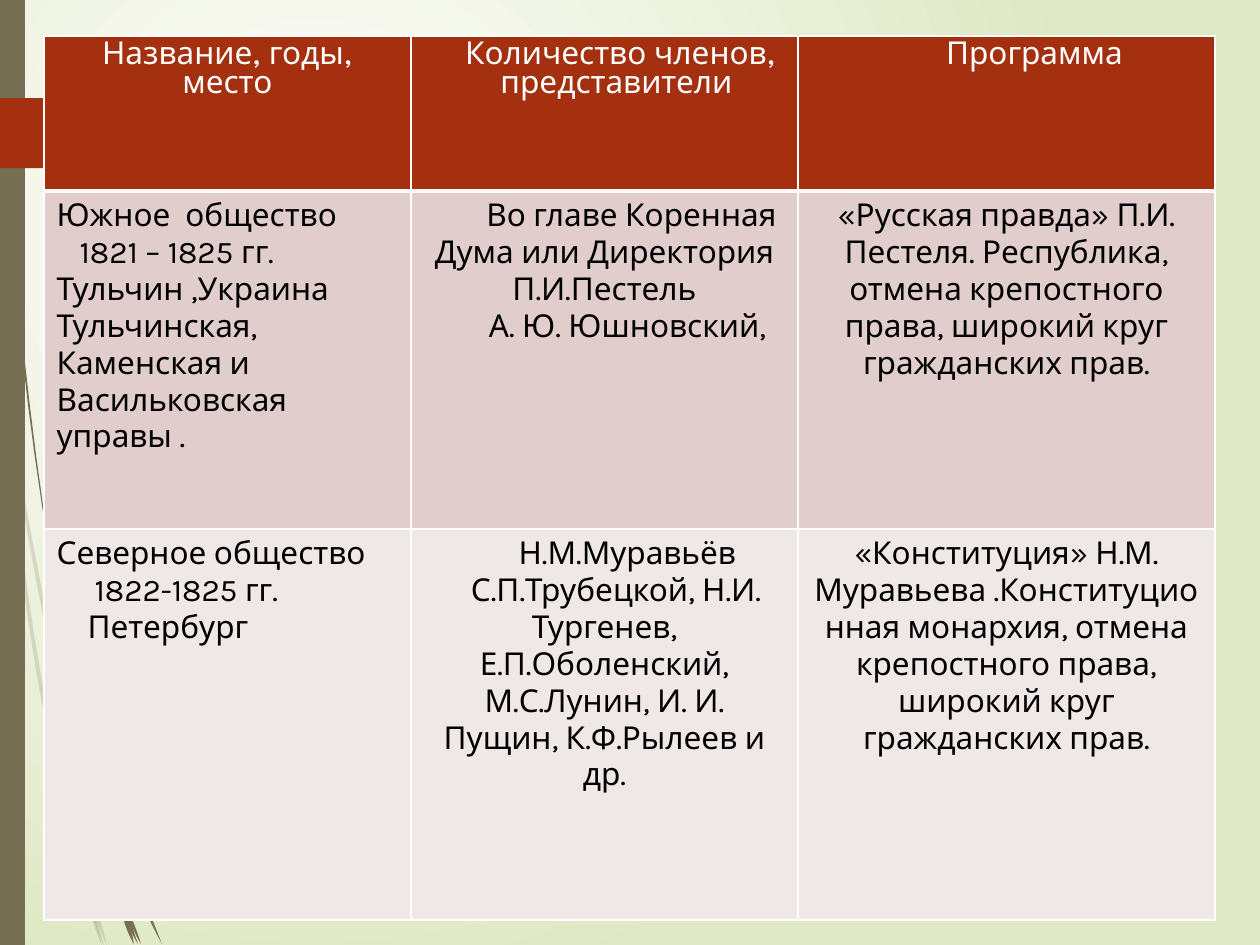
from lxml import etree
from pptx import Presentation
from pptx import util as u
from pptx.dml.color import RGBColor
from pptx.enum import shapes, text
from pptx.oxml import parse_xml
from pptx.oxml.ns import qn

SCALE = 914400 / 126  # EMU in one px
PAGE_WIDTH, PAGE_HEIGHT = 1260, 945
COLORS = {
    "white": "FFFFFF", "black": "000000", "sage": "DFE8C4", "olive": "766F54",
    "rust": "A53010", "rose": "E1CDCC", "pale": "F0E8E7",
}
CENTER, LEFT = text.PP_ALIGN.CENTER, text.PP_ALIGN.LEFT

# Grass: each blade is a tapered arc (start, middle, end, thickness) in px
BLADE_STEPS = 12
FAINT_TUFT = {
    "upper stalk": ((0, 366), (5, 403), (10, 441), 5),
    "middle stalk": ((13, 435), (40, 590), (74, 746), 4),
    "lower stalk": ((77, 758), (102, 852), (134, 946), 5),
    "left stalk": ((10, 441), (38, 670), (88, 900), 4),
    "long leaf": ((76, 745), (140, 440), (273, 194), 2),
    "joint": ((74, 755), (78, 826), (92, 896), 4),
    "bud": ((76, 738), (75, 752), (77, 769), 3),
    "left root": ((88, 900), (95, 923), (102, 946), 3),
    "middle root": ((82, 861), (91, 903), (104, 946), 4),
    "right root": ((92, 896), (99, 921), (107, 946), 3),
}
SOLID_TUFT = {
    "upper stalk": ((3, 0), (18, 303), (59, 606), 2),
    "middle stalk": ((63, 595), (83, 700), (111, 806), 4),
    "lower stalk": ((115, 808), (134, 876), (162, 944), 5),
    "left stalk": ((59, 601), (83, 755), (122, 910), 5),
    "thin leaf": ((60, 595), (56, 387), (73, 178), 2),
    "long leaf": ((113, 808), (164, 599), (272, 433), 3),
    "upper joint": ((57, 566), (61, 601), (67, 636), 4),
    "lower joint": ((112, 813), (115, 860), (126, 906), 5),
    "bud": ((113, 795), (112, 810), (115, 827), 3),
    "left root": ((122, 910), (128, 927), (134, 944), 4),
    "middle root": ((116, 871), (124, 908), (138, 944), 5),
    "right root": ((126, 906), (133, 925), (141, 944), 3),
}

# Table: each paragraph is (first-line indent in px, wording)
COLUMNS = [367, 387, 417]
ROWS = [155, 338, 391]
HEADER_ALIGNS = (CENTER, CENTER, CENTER)
BODY_ALIGNS = (LEFT, CENTER, CENTER)
ROW_STYLES = [  # fill, text colour, font, alignment of each column
    ("rust", "white", "League Spartan", HEADER_ALIGNS),
    ("rose", "black", "Karla", BODY_ALIGNS),
    ("pale", "black", "Karla", BODY_ALIGNS),
]
HEADER = [
    [(0, "Название, годы, место")],
    [(32, "Количество членов,"), (24, "представители")],
    [(56, "Программа")],
]
SOUTHERN_SOCIETY = [
    [(0, "Южное  общество"), (23, "1821 – 1825 гг."), (0, "Тульчин ,Украина"),
     (0, "Тульчинская, Каменская и Васильковская управы .")],
    [(54, "Во главе Коренная Дума или Директория П.И.Пестель"),
     (46, "А. Ю. Юшновский,")],
    [(0, "«Русская правда» П.И. Пестеля. Республика, отмена крепостного права, "
         "широкий круг гражданских прав.")],
]
NORTHERN_SOCIETY = [
    [(0, "Северное общество"), (38, "1822-1825 гг."), (31, "Петербург")],
    [(46, "Н.М.Муравьёв"),
     (23, "С.П.Трубецкой, Н.И. Тургенев, Е.П.Оболенский, М.С.Лунин, "
          "И. И. Пущин, К.Ф.Рылеев и др.")],
    [(0, "«Конституция» Н.М. Муравьева .Конституционная монархия, отмена "
         "крепостного права, широкий круг гражданских прав.")],
]


def px(length):
    return u.Emu(round(length * SCALE))


def rgb(name):
    return RGBColor.from_string(COLORS[name])


def set_background(page):
    """White glow in the upper left, fading to sage."""
    fill = page.background.fill
    fill.gradient()
    for stop, color, place in zip(fill.gradient_stops, ("white", "sage"), (0, 1)):
        stop.color.rgb = rgb(color)
        stop.position = place
    gradient = page._element.find(".//" + qn("a:gradFill"))
    gradient.replace(gradient.find(qn("a:lin")), parse_xml(
        '<a:path xmlns:a="http://schemas.openxmlformats.org/drawingml/2006/main" '
        'path="circle"><a:fillToRect l="50000" t="50000" r="100000" b="100000"/></a:path>'))


def paint(shape, color, opacity=100):
    shape.shadow.inherit = False
    shape.fill.solid()
    shape.fill.fore_color.rgb = rgb(color)
    shape.line.fill.background()
    if opacity < 100:
        tint = shape.fill._xPr.find(".//" + qn("a:srgbClr"))
        etree.SubElement(tint, qn("a:alpha"), val=str(opacity * 1000))


def arc_point(start, middle, end, t):
    """Point at t (0 to 1) of the parabola that passes middle at t = 0.5."""
    weights = ((1 - t) * (1 - 2 * t), 4 * t * (1 - t), t * (2 * t - 1))
    return [sum(w * point[axis] for w, point in zip(weights, (start, middle, end)))
            for axis in (0, 1)]


def add_blade(page, start, middle, end, thickness, opacity):
    """Follow the arc down one side and back up the other, pointed at both ends."""
    left, right = [], []
    for step in range(BLADE_STEPS + 1):
        t = step / BLADE_STEPS
        x, y = arc_point(start, middle, end, t)
        half = thickness / 2 * 4 * t * (1 - t)
        left.append((x - half, y))
        right.append((x + half, y))
    # Tenths of a px keep thin blades smooth
    outline = [(round(10 * x), round(10 * y)) for x, y in left + right[::-1]]
    builder = page.shapes.build_freeform(*outline[0], scale=SCALE / 10)
    builder.add_line_segments(outline[1:], close=True)
    paint(builder.convert_to_shape(), "olive", opacity)


def add_tuft(page, tuft, opacity):
    for start, middle, end, thickness in tuft.values():
        add_blade(page, start, middle, end, thickness, opacity)


def add_block(page, preset, left, top, width, height, color):
    shape = page.shapes.add_shape(preset, px(left), px(top), px(width), px(height))
    paint(shape, color)


def add_borders(cell, bottom):
    properties = cell._tc.get_or_add_tcPr()
    for side, points in (("L", 1), ("R", 1), ("T", 1), ("B", bottom)):
        line = etree.SubElement(properties, qn("a:ln" + side), w=str(u.Pt(points)))
        solid = etree.SubElement(line, qn("a:solidFill"))
        etree.SubElement(solid, qn("a:srgbClr"), val=COLORS["white"])


def fill_cell(cell, paragraphs, color, ink, font, align):
    cell.fill.solid()
    cell.fill.fore_color.rgb = rgb(color)
    frame = cell.text_frame
    for index, (indent, wording) in enumerate(paragraphs):
        para = frame.paragraphs[0] if index == 0 else frame.add_paragraph()
        para.text = wording
        para.alignment = align
        para.font.name = font
        para.font.size = u.Pt(18)
        para.font.bold = False
        para.font.color.rgb = rgb(ink)
        if indent:
            para._p.get_or_add_pPr().set("indent", str(px(indent)))


def add_societies_table(page, left, top):
    frame = page.shapes.add_table(len(ROWS), len(COLUMNS), px(left), px(top),
                                  px(sum(COLUMNS)), px(sum(ROWS)))
    table = frame.table
    table.first_row = table.horz_banding = False
    for column, width in zip(table.columns, COLUMNS):
        column.width = px(width)
    contents = (HEADER, SOUTHERN_SOCIETY, NORTHERN_SOCIETY)
    for row, height, style, content in zip(table.rows, ROWS, ROW_STYLES, contents):
        row.height = px(height)
        color, ink, font, aligns = style
        for cell, paragraphs, align in zip(row.cells, content, aligns):
            add_borders(cell, bottom=3 if content is HEADER else 1)
            fill_cell(cell, paragraphs, color, ink, font, align)


def main():
    deck = Presentation()
    deck.slide_width, deck.slide_height = px(PAGE_WIDTH), px(PAGE_HEIGHT)
    page = deck.slides.add_slide(deck.slide_layouts[6])

    # Backdrop: glow, grass, side bar and arrow tab
    set_background(page)
    add_tuft(page, FAINT_TUFT, opacity=20)
    add_tuft(page, SOLID_TUFT, opacity=100)
    add_block(page, shapes.MSO_SHAPE.RECTANGLE, 0, 0, 25, PAGE_HEIGHT, "olive")
    add_block(page, shapes.MSO_SHAPE.PENTAGON, 0, 98, 188, 70, "rust")

    # Comparison of the two societies
    add_societies_table(page, left=44, top=36)
    deck.save("out.pptx")


if __name__ == "__main__":
    main()
